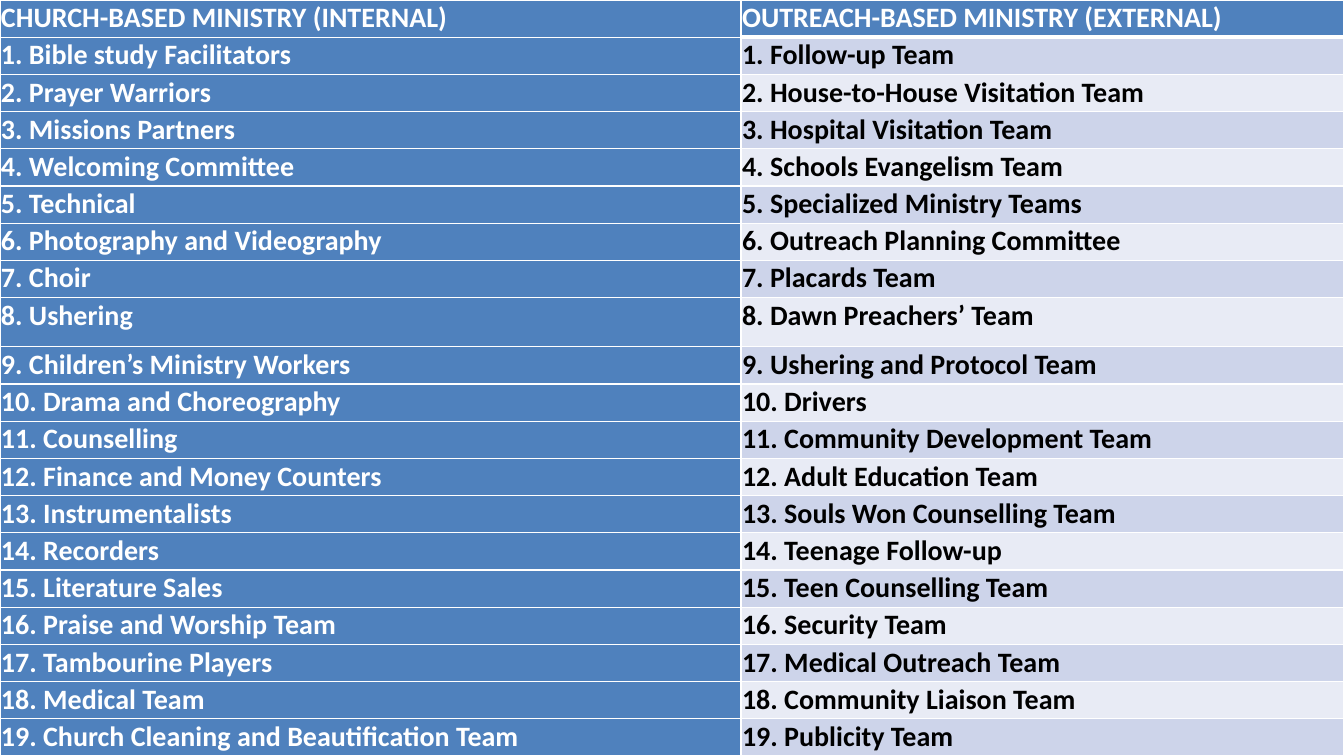
import lxml.etree
import pptx
import pptx.dml.color
import pptx.enum.text
import pptx.oxml.ns
import pptx.util

COLORS = {
    "blue": "4F81BD",
    "band_dark": "CDD4EA",
    "band_light": "E8EBF5",
    "white": "FFFFFF",
    "black": "000000",
}
SLIDE_WIDTH, SLIDE_HEIGHT = 13.33, 7.5
INTERNAL_WIDTH = 7.35
TALL_ROW, TALL_HEIGHT = 8, 0.49

HEADINGS = ("CHURCH-BASED MINISTRY (INTERNAL)", "OUTREACH-BASED MINISTRY (EXTERNAL)")
MINISTRIES = [
    ("Bible study Facilitators", "Follow-up Team"),
    ("Prayer Warriors", "House-to-House Visitation Team"),
    ("Missions Partners", "Hospital Visitation Team"),
    ("Welcoming Committee", "Schools Evangelism Team"),
    ("Technical", "Specialized Ministry Teams"),
    ("Photography and Videography", "Outreach Planning Committee"),
    ("Choir", "Placards Team"),
    ("Ushering", "Dawn Preachers’ Team"),
    ("Children’s Ministry Workers", "Ushering and Protocol Team"),
    ("Drama and Choreography", "Drivers"),
    ("Counselling", "Community Development Team"),
    ("Finance and Money Counters", "Adult Education Team"),
    ("Instrumentalists", "Souls Won Counselling Team"),
    ("Recorders", "Teenage Follow-up"),
    ("Literature Sales", "Teen Counselling Team"),
    ("Praise and Worship Team", "Security Team"),
    ("Tambourine Players", "Medical Outreach Team"),
    ("Medical Team", "Community Liaison Team"),
    ("Church Cleaning and Beautification Team", "Publicity Team"),
]


def rgb(name):
    return pptx.dml.color.RGBColor.from_string(COLORS[name])


def write_text(text_frame, text, color="black", size=20, bold=True, font="Calibri",
               align=pptx.enum.text.PP_ALIGN.JUSTIFY):
    paragraph = text_frame.paragraphs[0]
    paragraph.alignment = align
    run = paragraph.add_run()
    run.text = text
    run.font.name = font
    run.font.size = pptx.util.Pt(size)
    run.font.bold = bold
    run.font.color.rgb = rgb(color)


class MinistrySlide:
    margin = pptx.util.Inches(0.01)
    border_color = "white"

    def __init__(self, presentation):
        self.slide = presentation.slides.add_slide(presentation.slide_layouts[6])

    def add_table(self, rows, column_widths, row_heights):
        width, height = sum(column_widths), sum(row_heights)
        table = self.slide.shapes.add_table(
            len(rows), len(column_widths), 0, 0,
            pptx.util.Inches(width), pptx.util.Inches(height)).table
        table.horz_banding = False
        for column, column_width in zip(table.columns, column_widths):
            column.width = pptx.util.Inches(column_width)
        for row, row_height in zip(table.rows, row_heights):
            row.height = pptx.util.Inches(row_height)
        for row_index, texts in enumerate(rows):
            for column_index, text in enumerate(texts):
                self.format_cell(table.cell(row_index, column_index), text,
                                 row_index, column_index)

    def format_cell(self, cell, text, row, column):
        """The header and first column are blue; the rest is banded."""
        is_blue = row == 0 or column == 0
        band = "band_dark" if row % 2 else "band_light"
        cell.margin_left = cell.margin_right = self.margin
        cell.margin_top = cell.margin_bottom = self.margin
        self.add_borders(cell, top=3 if row == 1 and column else 1,
                         bottom=3 if row == 0 and column else 1)
        cell.fill.solid()
        cell.fill.fore_color.rgb = rgb("blue" if is_blue else band)
        write_text(cell.text_frame, text, color="white" if is_blue else "black")

    def add_borders(self, cell, top, bottom):
        qn = pptx.oxml.ns.qn
        properties = cell._tc.get_or_add_tcPr()
        for side, points in (("L", 1), ("R", 1), ("T", top), ("B", bottom)):
            line = lxml.etree.SubElement(properties, qn(f"a:ln{side}"),
                                         w=str(pptx.util.Pt(points)))
            fill = lxml.etree.SubElement(line, qn("a:solidFill"))
            lxml.etree.SubElement(fill, qn("a:srgbClr"), val=COLORS[self.border_color])


def main():
    presentation = pptx.Presentation()
    presentation.slide_width = pptx.util.Inches(SLIDE_WIDTH)
    presentation.slide_height = pptx.util.Inches(SLIDE_HEIGHT)

    rows = [HEADINGS] + [
        tuple(f"{number}. {name}" for name in names)
        for number, names in enumerate(MINISTRIES, start=1)
    ]
    row_heights = [(SLIDE_HEIGHT - TALL_HEIGHT) / (len(rows) - 1)] * len(rows)
    row_heights[TALL_ROW] = TALL_HEIGHT
    column_widths = [INTERNAL_WIDTH, SLIDE_WIDTH - INTERNAL_WIDTH]
    MinistrySlide(presentation).add_table(rows, column_widths, row_heights)
    presentation.save("out.pptx")


if __name__ == "__main__":
    main()
